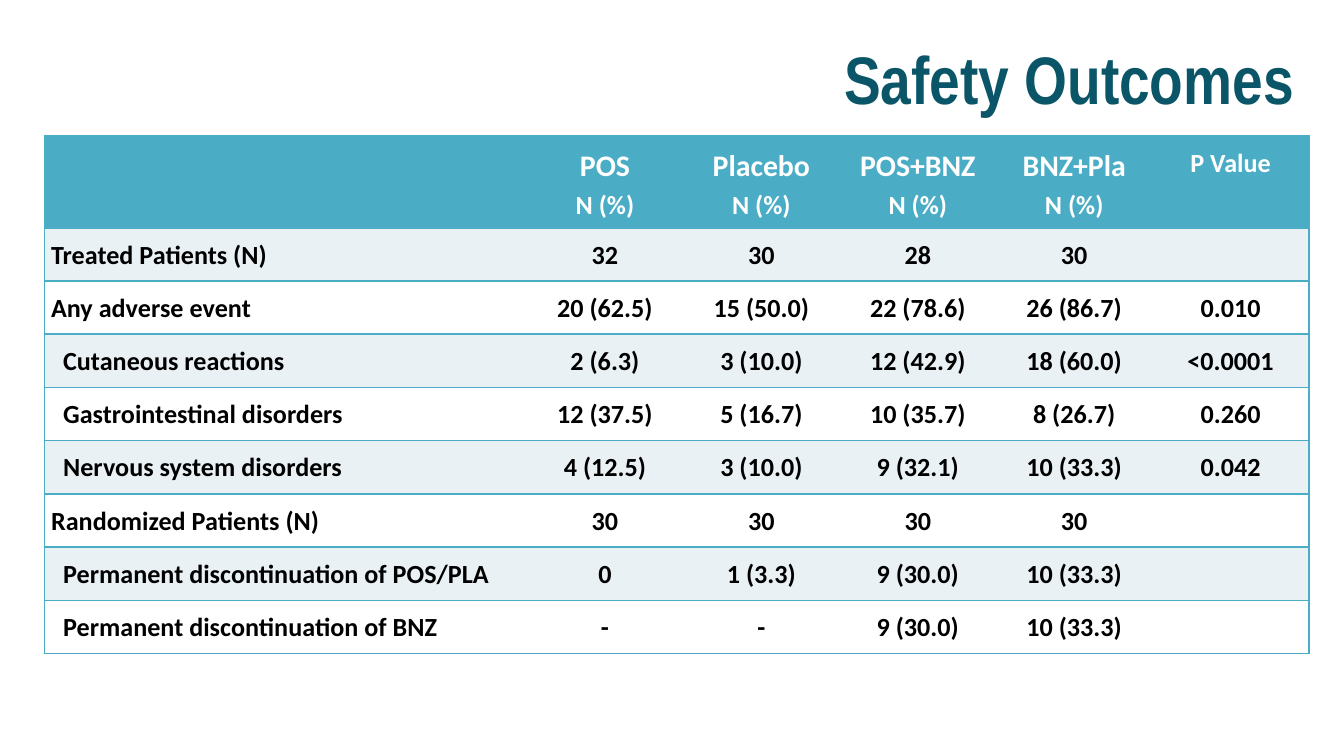
from lxml import etree
from pptx import Presentation
from pptx.dml.color import RGBColor
from pptx.enum.text import MSO_ANCHOR, PP_ALIGN
from pptx.oxml.ns import qn
from pptx.util import Inches, Pt

LEFT, CENTER, RIGHT = PP_ALIGN.LEFT, PP_ALIGN.CENTER, PP_ALIGN.RIGHT
MIDDLE = MSO_ANCHOR.MIDDLE
TITLE_ONLY = 5
TEAL, NAVY, PALE, WHITE, BLACK = "4BACC6", "0B5569", "E9F1F5", "FFFFFF", "000000"
HEADER_HEIGHT, LABEL_WIDTH, INSET, INDENT = 0.68, 3.59, 0.05, 0.09

HEADERS = ["", "POS\nN (%)", "Placebo\nN (%)", "POS+BNZ\nN (%)", "BNZ+Pla\nN (%)", "P Value"]
OUTCOMES = [
    (0, "Treated Patients (N)", "32", "30", "28", "30", ""),
    (0, "Any adverse event", "20 (62.5)", "15 (50.0)", "22 (78.6)", "26 (86.7)", "0.010"),
    (1, "Cutaneous reactions", "2 (6.3)", "3 (10.0)", "12 (42.9)", "18 (60.0)", "<0.0001"),
    (1, "Gastrointestinal disorders", "12 (37.5)", "5 (16.7)", "10 (35.7)", "8 (26.7)", "0.260"),
    (1, "Nervous system disorders", "4 (12.5)", "3 (10.0)", "9 (32.1)", "10 (33.3)", "0.042"),
    (0, "Randomized Patients (N)", "30", "30", "30", "30", ""),
    (1, "Permanent discontinuation of POS/PLA", "0", "1 (3.3)", "9 (30.0)", "10 (33.3)", ""),
    (1, "Permanent discontinuation of BNZ", "-", "-", "9 (30.0)", "10 (33.3)", ""),
]


def color(hex_value):
    """Return the colour for a hex string."""
    return RGBColor.from_string(hex_value)


def apply(target, values):
    """Set each attribute of the target from a dict."""
    for name, value in values.items():
        setattr(target, name, value)


def write_span(para, text, size, font, hex_value):
    """Add one bold span of text to a paragraph."""
    span = para.add_run()
    span.text = text
    apply(span.font, {"size": Pt(size), "name": font, "bold": True})
    span.font.color.rgb = color(hex_value)


def add_title(page, box, text):
    """Move the title placeholder into the box and fill it."""
    title = page.shapes.title
    apply(title, dict(zip(("left", "top", "width", "height"), map(Inches, box))))
    title.text_frame.vertical_anchor = MIDDLE
    para = title.text_frame.paragraphs[0]
    para.alignment = RIGHT
    write_span(para, text, 36, "Arial Narrow", NAVY)


def set_borders(cell, sides):
    """Rule the named sides of a cell and clear the others."""
    properties = cell._tc.get_or_add_tcPr()
    for index, side in enumerate("LRTB"):
        line = etree.Element(qn(f"a:ln{side}"), w=str(Pt(1)))
        if side in sides:
            fill = etree.SubElement(line, qn("a:solidFill"))
            etree.SubElement(fill, qn("a:srgbClr"), val=TEAL)
        else:
            etree.SubElement(line, qn("a:noFill"))
        properties.insert(index, line)


def fill_cell(cell, text, fill, text_color, alignment, sides, indent=0):
    """Write and format one table cell; two-line text gets a larger first line."""
    margins = {f"margin_{side}": Inches(INSET) for side in ("left", "right", "top", "bottom")}
    apply(cell, {**margins, "margin_left": Inches(INSET + indent)})
    cell.fill.solid()
    cell.fill.fore_color.rgb = color(fill)
    set_borders(cell, sides)
    lines = text.split("\n")
    for index, line in enumerate(lines):
        frame = cell.text_frame
        para = frame.add_paragraph() if index else frame.paragraphs[0]
        apply(para, {"alignment": alignment, "line_spacing": 1.15})
        size = 16 if index < len(lines) - 1 else 14
        write_span(para, line, size, "Calibri", text_color)


def add_outcome_table(page, box):
    """Draw the safety table inside the box."""
    width, height = box[2:]
    last = len(HEADERS) - 1
    frame = page.shapes.add_table(len(OUTCOMES) + 1, len(HEADERS), *map(Inches, box))
    table = frame.table
    table.horz_banding = False
    for index, column in enumerate(table.columns):
        column.width = Inches((width - LABEL_WIDTH) / last if index else LABEL_WIDTH)
    for index, row in enumerate(table.rows):
        row.height = Inches((height - HEADER_HEIGHT) / len(OUTCOMES) if index else HEADER_HEIGHT)
    for row, (level, *texts) in enumerate([(0, *HEADERS), *OUTCOMES]):
        fill = (PALE if row % 2 else WHITE) if row else TEAL
        for column, text in enumerate(texts):
            sides = "TB" + {0: "L", last: "R"}.get(column, "")
            fill_cell(table.cell(row, column), text, fill, BLACK if row else WHITE,
                      CENTER if column else LEFT, sides, 0 if column else level * INDENT)


def main():
    """Build the deck and save it."""
    deck = Presentation()
    apply(deck, {"slide_width": Inches(10), "slide_height": Inches(10 * 9 / 16)})
    page = deck.slides.add_slide(deck.slide_layouts[TITLE_ONLY])
    add_title(page, (0.5, 0.15, 9.23, 0.86), "Safety Outcomes")
    add_outcome_table(page, (0.33, 1.01, 9.41, 3.85))
    deck.save("out.pptx")


if __name__ == "__main__":
    main()
